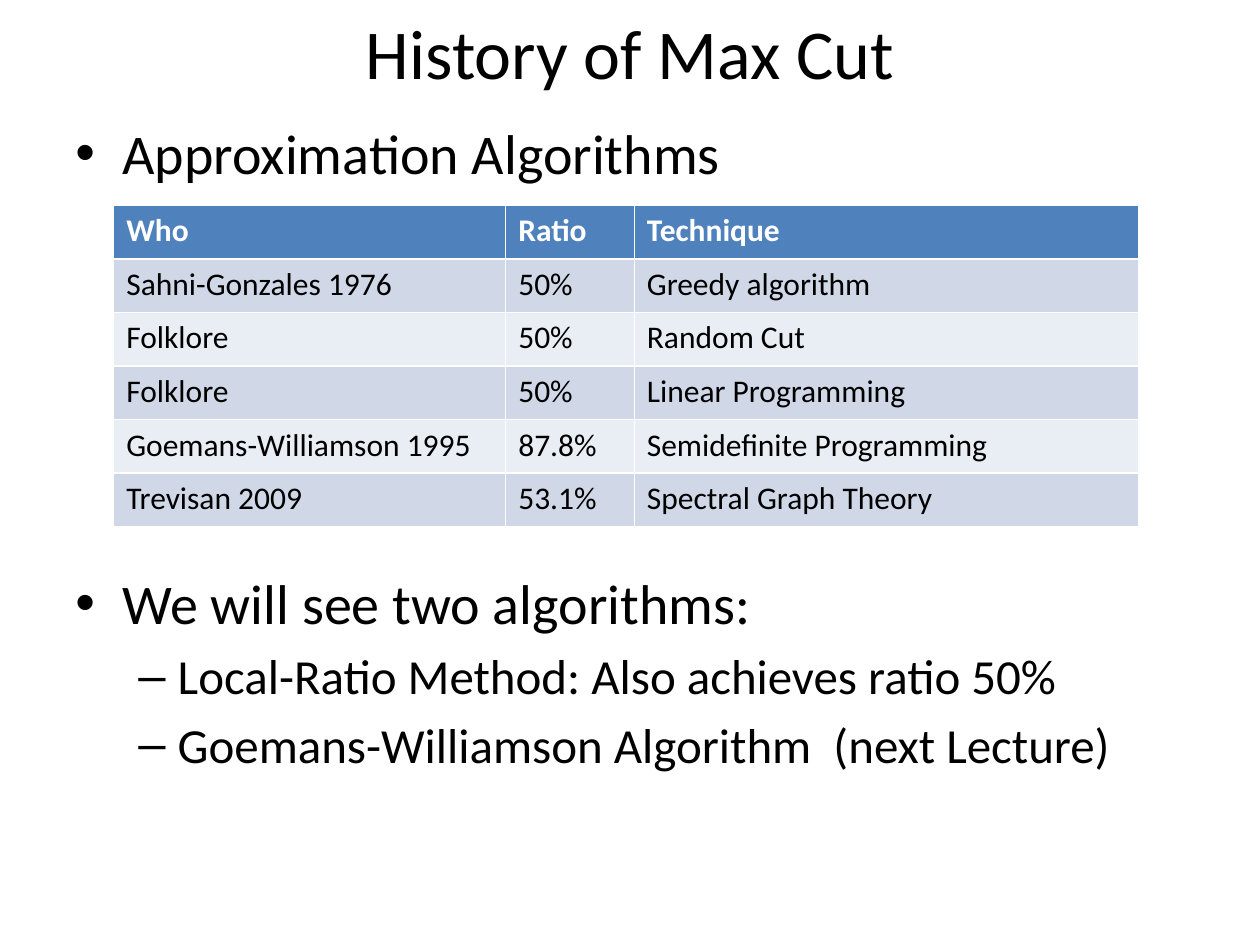
from lxml.etree import SubElement
from pptx import Presentation
from pptx.dml.color import RGBColor
from pptx.enum.text import MSO_ANCHOR, PP_ALIGN
from pptx.oxml.ns import qn
from pptx.util import Pt

BLACK = RGBColor(0x00, 0x00, 0x00)
WHITE = RGBColor(0xFF, 0xFF, 0xFF)
HEADER_BLUE = RGBColor(0x4F, 0x81, 0xBD)
BANDS = (RGBColor(0xE9, 0xED, 0xF4), RGBColor(0xD0, 0xD8, 0xE8))
FONT = "Calibri"

BULLET_LEVELS = (
    {"size": 32, "indent": 27, "hanging": 27, "mark": "•"},
    {"size": 28, "indent": 58.5, "hanging": 22.5, "mark": "–"},
)
RESULTS = (
    ("Who", "Ratio", "Technique"),
    ("Sahni-Gonzales 1976", "50%", "Greedy algorithm"),
    ("Folklore", "50%", "Random Cut"),
    ("Folklore", "50%", "Linear Programming"),
    ("Goemans-Williamson 1995", "87.8%", "Semidefinite Programming"),
    ("Trevisan 2009", "53.1%", "Spectral Graph Theory"),
)
COLUMN_WIDTHS = (224, 73.5, 288.5)


def format_font(paragraph, size, color=BLACK, bold=False):
    font = paragraph.font
    font.name = FONT
    font.size = Pt(size)
    font.bold = bold
    font.color.rgb = color


def place_title(slide, text, left, top, width, height):
    title = slide.shapes.title
    title.left, title.top = Pt(left), Pt(top)
    title.width, title.height = Pt(width), Pt(height)
    frame = title.text_frame
    frame.text = text
    frame.vertical_anchor = MSO_ANCHOR.MIDDLE
    paragraph = frame.paragraphs[0]
    paragraph.alignment = PP_ALIGN.CENTER
    format_font(paragraph, 40)


def add_bullets(slide, items, left, top, width, height):
    box = slide.shapes.add_textbox(Pt(left), Pt(top), Pt(width), Pt(height))
    frame = box.text_frame
    frame.word_wrap = True
    for index, (level, text) in enumerate(items):
        style = BULLET_LEVELS[level]
        paragraph = frame.add_paragraph() if index else frame.paragraphs[0]
        paragraph.text = text
        paragraph.level = level
        format_font(paragraph, style["size"])
        if index:
            paragraph.space_before = Pt(style["size"] * 0.2)
        properties = paragraph._p.get_or_add_pPr()
        properties.set("marL", str(Pt(style["indent"])))
        properties.set("indent", str(-Pt(style["hanging"])))
        bullet_font = SubElement(properties, qn("a:buFont"), typeface="Arial")
        bullet = SubElement(properties, qn("a:buChar"), char=style["mark"])
        default_run = properties.find(qn("a:defRPr"))
        default_run.addprevious(bullet_font)
        default_run.addprevious(bullet)


def add_results_table(slide, rows, left, top, width, height):
    table = slide.shapes.add_table(
        len(rows), len(COLUMN_WIDTHS), Pt(left), Pt(top), Pt(width), Pt(height)
    ).table
    for column, column_width in zip(table.columns, COLUMN_WIDTHS):
        column.width = Pt(column_width)
    for row_index, row in enumerate(rows):
        is_header = row_index == 0
        for column_index, text in enumerate(row):
            cell = table.cell(row_index, column_index)
            cell.text = text
            cell.fill.solid()
            cell.fill.fore_color.rgb = HEADER_BLUE if is_header else BANDS[row_index % 2]
            format_font(cell.text_frame.paragraphs[0], 18, WHITE if is_header else BLACK, is_header)


def main():
    presentation = Presentation()
    presentation.slide_width, presentation.slide_height = Pt(720), Pt(540)
    slide = presentation.slides.add_slide(presentation.slide_layouts[5])
    place_title(slide, "History of Max Cut", 36, -7, 648, 73)
    add_bullets(slide, [(0, "Approximation Algorithms")], 36, 64, 648, 48)
    add_results_table(slide, RESULTS, 65, 117.5, sum(COLUMN_WIDTHS), 183.6)
    add_bullets(
        slide,
        [
            (0, "We will see two algorithms:"),
            (1, "Local-Ratio Method: Also achieves ratio 50%"),
            (1, "Goemans-Williamson Algorithm  (next Lecture)"),
        ],
        36, 321.5, 648, 196,
    )
    presentation.save("out.pptx")


if __name__ == "__main__":
    main()
